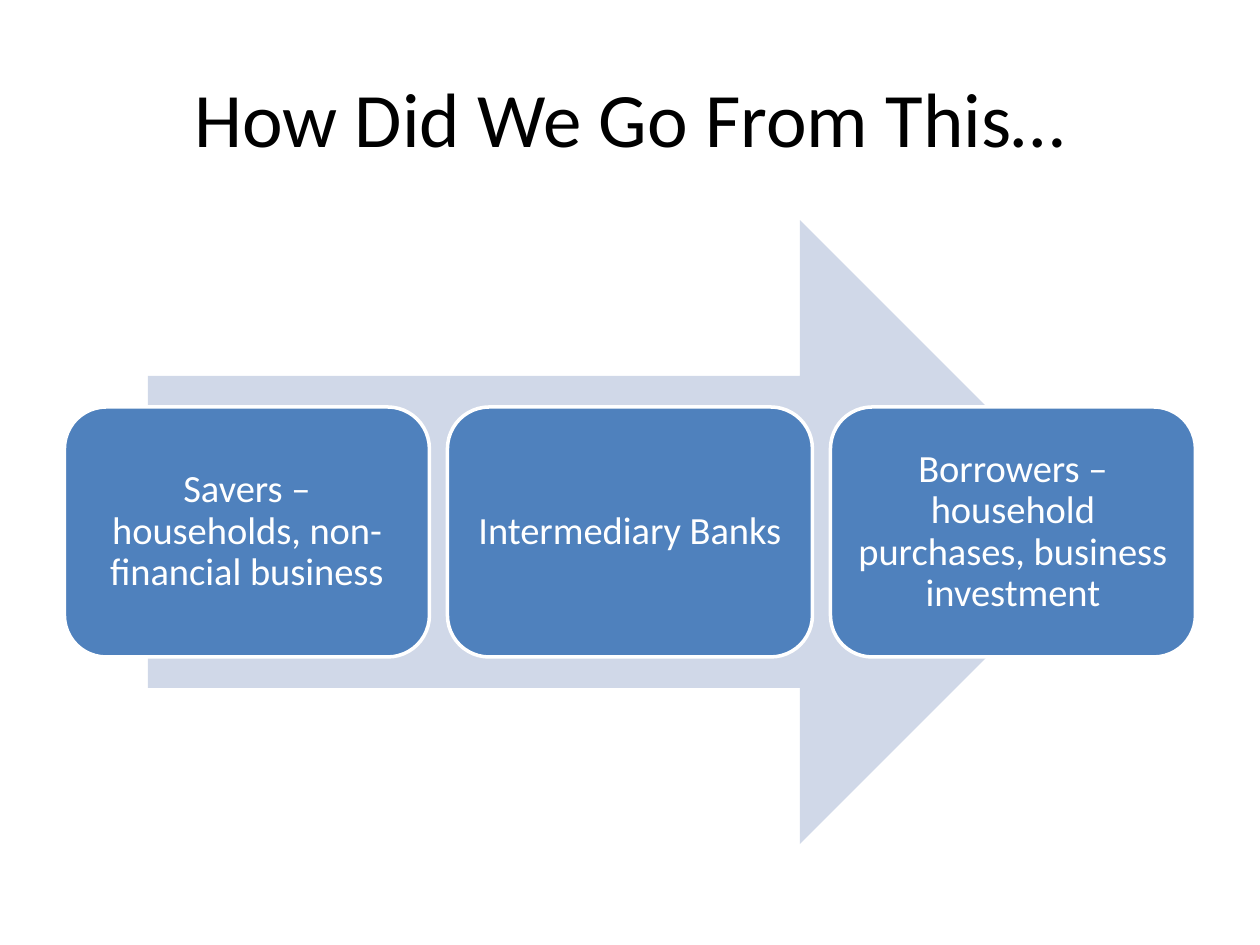
from pptx import Presentation
from pptx.dml.color import RGBColor as RGB
from pptx.enum.shapes import MSO_SHAPE as Kind
from pptx.enum.text import MSO_ANCHOR as Anchor, PP_ALIGN as Align
from pptx.util import Pt

TITLE = "How Did We Go From This…"
STAGES = [
    "Savers – households, non-financial business",
    "Intermediary Banks",
    "Borrowers – household purchases, business investment",
]
THEME = {
    "font": "Calibri",
    "ink": RGB(0, 0, 0),
    "white": RGB(255, 255, 255),
    "arrow": RGB(0xD0, 0xD8, 0xE8),
    "box": RGB(0x4F, 0x81, 0xBD),
    "head": Pt(44),
    "body": Pt(22),
    "line": Pt(2),
}
WIDE, HIGH = 1260, 945
BOX_W, BOX_H, GAP = 365, 250, 18
INSET = 12


def px(n):
    return round(n * 914400 / 126)


def put(item, values):
    for name, value in values.items():
        setattr(item, name, value)


def write(shape, text, size, color, pad, space):
    frame = shape.text_frame
    sides = ("left", "top", "right", "bottom")
    put(frame, {f"margin_{side}": px(pad) for side in sides})
    put(frame, {"word_wrap": True, "vertical_anchor": Anchor.MIDDLE})
    para = frame.paragraphs[0]
    put(para, {"alignment": Align.CENTER, "line_spacing": space})
    run = para.add_run()
    run.text = text
    put(run.font, {"name": THEME["font"], "size": size})
    run.font.color.rgb = color


def draw(slide, kind, area, fill):
    shape = slide.shapes.add_shape(kind, *map(px, area))
    shape.shadow.inherit = False
    shape.fill.solid()
    shape.fill.fore_color.rgb = fill
    shape.line.fill.background()
    return shape


def main():
    deck = Presentation()
    put(deck, {"slide_width": px(WIDE), "slide_height": px(HIGH)})
    slide = deck.slides.add_slide(deck.slide_layouts[6])

    title = slide.shapes.add_textbox(*map(px, (63, 38, 1134, 157)))
    write(title, TITLE, THEME["head"], THEME["ink"], INSET, 1.0)

    draw(slide, Kind.RIGHT_ARROW, (148, 220, 964, 624), THEME["arrow"])

    count = len(STAGES)
    left = (WIDE - count * BOX_W - (count - 1) * GAP) / 2
    for i, text in enumerate(STAGES):
        area = (left + i * (BOX_W + GAP), 407, BOX_W, BOX_H)
        box = draw(slide, Kind.ROUNDED_RECTANGLE, area, THEME["box"])
        box.line.color.rgb = THEME["white"]
        box.line.width = THEME["line"]
        write(box, text, THEME["body"], THEME["white"], INSET, 0.9)

    deck.save("out.pptx")


if __name__ == "__main__":
    main()
